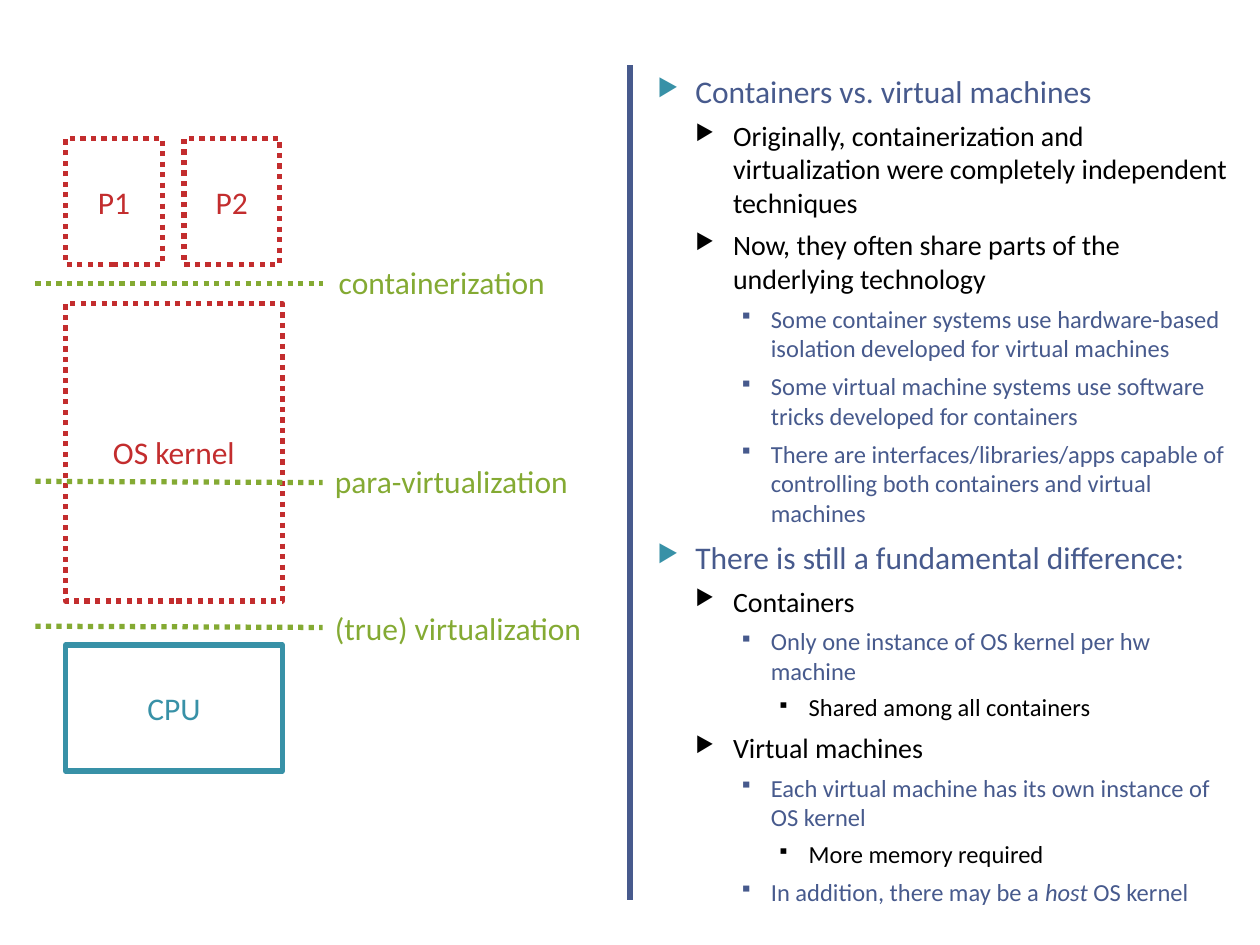
"""Build a slide comparing containers with virtual machines."""
from lxml.etree import SubElement
from pptx import Presentation
from pptx.dml.color import RGBColor
from pptx.enum.dml import MSO_LINE
from pptx.enum.shapes import MSO_CONNECTOR, MSO_SHAPE
from pptx.enum.text import MSO_ANCHOR, PP_ALIGN
from pptx.oxml.ns import qn
from pptx.util import Inches, Pt

RED = RGBColor(0xC3, 0x2D, 0x2E)
GREEN = RGBColor(0x84, 0xAA, 0x33)
TEAL = RGBColor(0x38, 0x91, 0xA7)
NAVY = RGBColor(0x47, 0x5A, 0x8D)
BLACK = RGBColor(0, 0, 0)

deck = Presentation()
deck.slide_width, deck.slide_height = Inches(10), Inches(7.5)
COLUMN, ROW = deck.slide_width / 100, deck.slide_height / 75
slide = deck.slides.add_slide(deck.slide_layouts[6])


def write(paragraph, text, size=18, color=NAVY, align=None, bullet=None,
          bullet_color=None, bullet_size=76, level=0, hanging=0.3, before=0):
    """Fill a paragraph; words between asterisks become italic."""
    paragraph.alignment = align
    paragraph.level = level
    paragraph.space_before = Pt(before)
    if bullet:
        properties = paragraph._p.get_or_add_pPr()
        properties.set("marL", str(Inches(0.3 * (level + 1))))
        properties.set("indent", str(-Inches(hanging)))
        tint = SubElement(properties, qn("a:buClr"))
        SubElement(tint, qn("a:srgbClr"), val=str(bullet_color))
        SubElement(properties, qn("a:buSzPct"), val=str(bullet_size * 1000))
        SubElement(properties, qn("a:buChar"), char=bullet)
    for index, part in enumerate(text.split("*")):
        run = paragraph.add_run()
        run.text = part
        run.font.name = "Calibri"
        run.font.size = Pt(size)
        run.font.color.rgb = color
        run.font.italic = index % 2 == 1


def draw_line(start_x, start_y, end_x, end_y, color, width, dash=None):
    """Draw a straight line between two grid points."""
    line = slide.shapes.add_connector(
        MSO_CONNECTOR.STRAIGHT, int(start_x * COLUMN), int(start_y * ROW),
        int(end_x * COLUMN), int(end_y * ROW))
    line.line.color.rgb = color
    line.line.width = Pt(width)
    line.line.dash_style = dash
    SubElement(line._element.spPr, qn("a:effectLst"))


draw_line(50, 5.2, 50, 71.4, NAVY, 4)

layers = [
    ("P1", 5.2, 11, 7.7, 10, RED, MSO_LINE.ROUND_DOT),
    ("P2", 14.6, 11, 7.6, 10, RED, MSO_LINE.ROUND_DOT),
    ("OS kernel", 5.2, 24.1, 17.2, 23.6, RED, MSO_LINE.ROUND_DOT),
    ("CPU", 5.2, 51.2, 17.2, 10, TEAL, None),
]
for name, left, top, width, height, color, dash in layers:
    layer = slide.shapes.add_shape(
        MSO_SHAPE.RECTANGLE, int(left * COLUMN), int(top * ROW),
        int(width * COLUMN), int(height * ROW))
    layer.shadow.inherit = False
    layer.fill.background()
    layer.line.color.rgb = color
    layer.line.width = Pt(3)
    layer.line.dash_style = dash
    layer.text_frame.vertical_anchor = MSO_ANCHOR.MIDDLE
    write(layer.text_frame.paragraphs[0], name, color=color, align=PP_ALIGN.CENTER)

boundaries = [
    ("containerization", 22.5, 22.5, 25.9, 20.3),
    ("para-virtualization", 38.2, 38.3, 25.6, 36.1),
    ("(true) virtualization", 49.7, 49.8, 25.6, 47.7),
]
for name, start_y, end_y, left, top in boundaries:
    draw_line(2.8, start_y, 25.6, end_y, GREEN, 3, MSO_LINE.ROUND_DOT)
    label = slide.shapes.add_textbox(
        int(left * COLUMN), int(top * ROW), int(23.6 * COLUMN), int(4.2 * ROW)).text_frame
    label.word_wrap = True
    label.vertical_anchor = MSO_ANCHOR.MIDDLE
    write(label.paragraphs[0], name, color=GREEN)

level_formats = [
    dict(size=18, color=NAVY, bullet="▶", bullet_color=TEAL, before=6),
    dict(size=16, color=BLACK, bullet="▶", bullet_color=BLACK, before=5),
    dict(size=14, color=NAVY, bullet="▪", bullet_color=NAVY, before=5, hanging=0.25),
    dict(size=14, color=BLACK, bullet="▪", bullet_color=BLACK, before=4, hanging=0.25,
         bullet_size=70),
]
comparison = [
    (0, "Containers vs. virtual machines"),
    (1, "Originally, containerization and virtualization were completely independent techniques"),
    (1, "Now, they often share parts of the underlying technology"),
    (2, "Some container systems use hardware-based isolation developed for virtual machines"),
    (2, "Some virtual machine systems use software tricks developed for containers"),
    (2, "There are interfaces/libraries/apps capable of controlling both containers "
        "and virtual machines"),
    (0, "There is still a fundamental difference:"),
    (1, "Containers"),
    (2, "Only one instance of OS kernel per hw machine"),
    (3, "Shared among all containers"),
    (1, "Virtual machines"),
    (2, "Each virtual machine has its own instance of OS kernel"),
    (3, "More memory required"),
    (2, "In addition, there may be a *host *OS kernel"),
]
outline = slide.shapes.add_textbox(
    int(51.2 * COLUMN), int(5.2 * ROW), int(47.6 * COLUMN), int(66.1 * ROW)).text_frame
outline.word_wrap = True
for index, (level, point) in enumerate(comparison):
    paragraph = outline.add_paragraph() if index else outline.paragraphs[0]
    write(paragraph, point, level=level, **level_formats[level])

deck.save("out.pptx")
